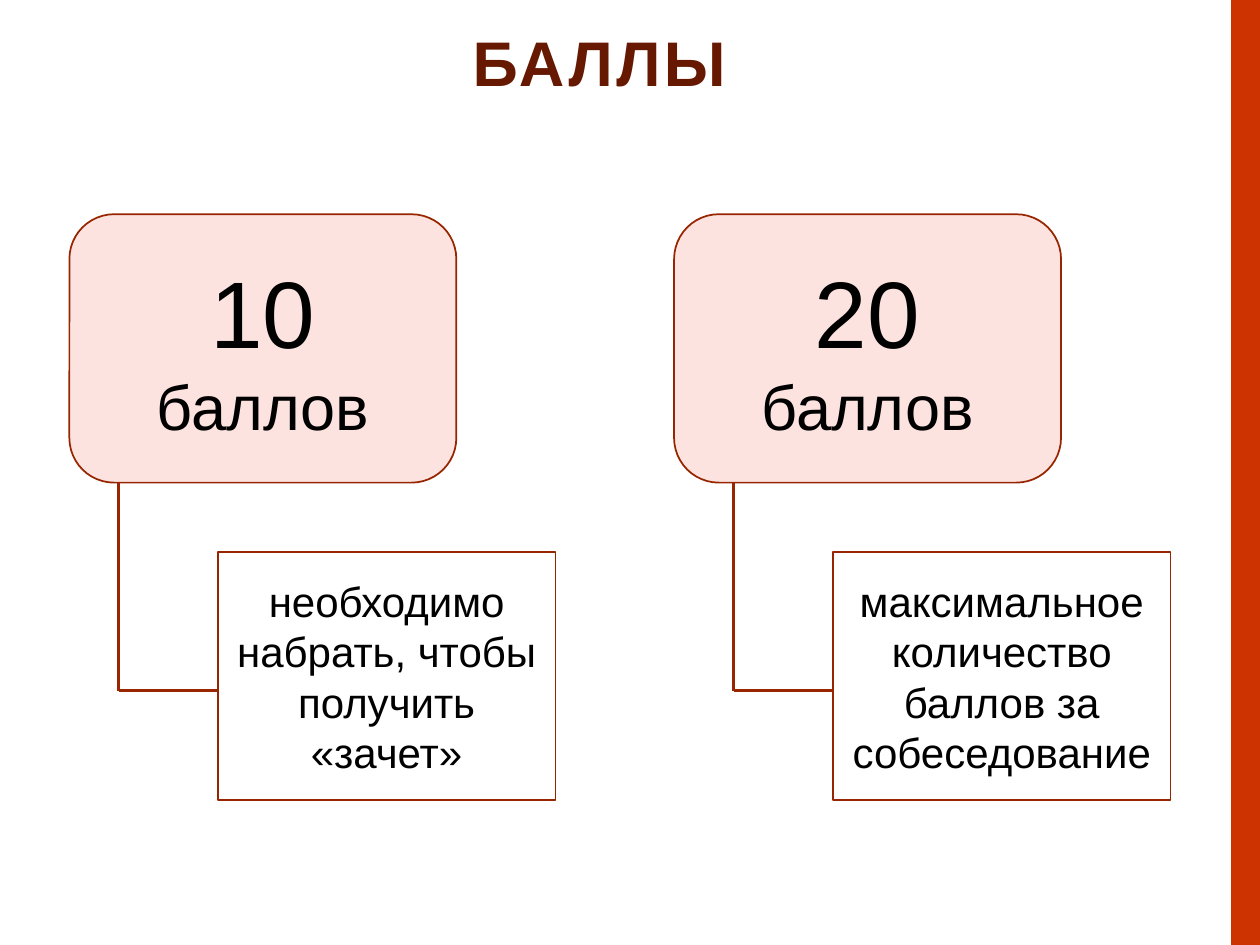
from lxml.etree import SubElement
from pptx import Presentation
from pptx.dml.color import RGBColor
from pptx.enum.shapes import MSO_CONNECTOR as Link, MSO_SHAPE as Shape
from pptx.enum.text import MSO_ANCHOR as Anchor, PP_ALIGN as Align
from pptx.oxml.ns import qn
from pptx.util import Cm, Pt

BORDER, BRANCH = "972600", "992600"
SCORE_TOP, SCORE_WIDTH, SCORE_HEIGHT = 4.32, 7.8, 5.41
DETAIL_TOP, DETAIL_WIDTH, DETAIL_HEIGHT = 11.13, 6.81, 5
BRANCH_Y, BRANCH_WIDTH = 13.92, 2

GROUPS = [
    (1.4, 4.39, [[("10 ", 54), ("баллов", 36)]],
     "необходимо набрать, чтобы получить «зачет»"),
    (13.59, 16.79, [[("20", 54)], [("баллов", 36)]],
     "максимальное количество баллов за собеседование"),
]


def color(value):
    return RGBColor.from_string(value)


def write(frame, paragraphs, ink="000000", anchor=Anchor.MIDDLE):
    frame.word_wrap = True
    frame.vertical_anchor = anchor
    for index, pieces in enumerate(paragraphs):
        paragraph = frame.add_paragraph() if index else frame.paragraphs[0]
        paragraph.alignment = Align.CENTER
        for words, size in pieces:
            run = paragraph.add_run()
            run.text = words
            run.font.name = "Arial"
            run.font.size = Pt(size)
            run.font.color.rgb = color(ink)


def add_box(slide, kind, left, top, width, height, fill=None, border=None):
    box = slide.shapes.add_shape(kind, Cm(left), Cm(top), Cm(width), Cm(height))
    box.shadow.inherit = False
    if fill:
        box.fill.solid()
        box.fill.fore_color.rgb = color(fill)
    else:
        box.fill.background()
    if border:
        box.line.color.rgb = color(border)
        box.line.width = Pt(1)
    else:
        box.line.fill.background()
    return box


def add_branch(slide, x1, y1, x2, y2):
    branch = slide.shapes.add_connector(Link.STRAIGHT, Cm(x1), Cm(y1), Cm(x2), Cm(y2))
    branch.line.color.rgb = color(BRANCH)
    branch.line.width = Pt(2)
    SubElement(branch._element.spPr, qn("a:effectLst"))


def add_title(slide, words):
    title = slide.shapes.add_textbox(Cm(0.08), Cm(0.53), Cm(24), Cm(3))
    write(title.text_frame, [[(words, 36)]], "661900", Anchor.TOP)
    paragraph = title.text_frame.paragraphs[0]
    paragraph.line_spacing = 0.9
    font = paragraph.runs[0].font
    font.bold = True
    font._element.set("spc", "200")


def add_group(slide, score_left, detail_left, score, detail):
    score_box = add_box(slide, Shape.ROUNDED_RECTANGLE, score_left, SCORE_TOP,
                        SCORE_WIDTH, SCORE_HEIGHT, "FCE3DF", BORDER)
    write(score_box.text_frame, score)
    detail_box = add_box(slide, Shape.RECTANGLE, detail_left, DETAIL_TOP,
                         DETAIL_WIDTH, DETAIL_HEIGHT, border=BORDER)
    write(detail_box.text_frame, [[(detail, 24)]])
    trunk = detail_left - BRANCH_WIDTH
    add_branch(slide, trunk, SCORE_TOP + SCORE_HEIGHT, trunk, BRANCH_Y)
    add_branch(slide, trunk, BRANCH_Y, detail_left, BRANCH_Y)


def main():
    deck = Presentation()
    deck.slide_width, deck.slide_height = Cm(25.4), Cm(19.05)
    slide = deck.slides.add_slide(deck.slide_layouts[6])
    add_box(slide, Shape.RECTANGLE, 24.82, 0, 0.58, 19.05, "CC3300")
    for group in GROUPS:
        add_group(slide, *group)
    add_title(slide, "БАЛЛЫ")
    deck.save("out.pptx")


if __name__ == "__main__":
    main()
